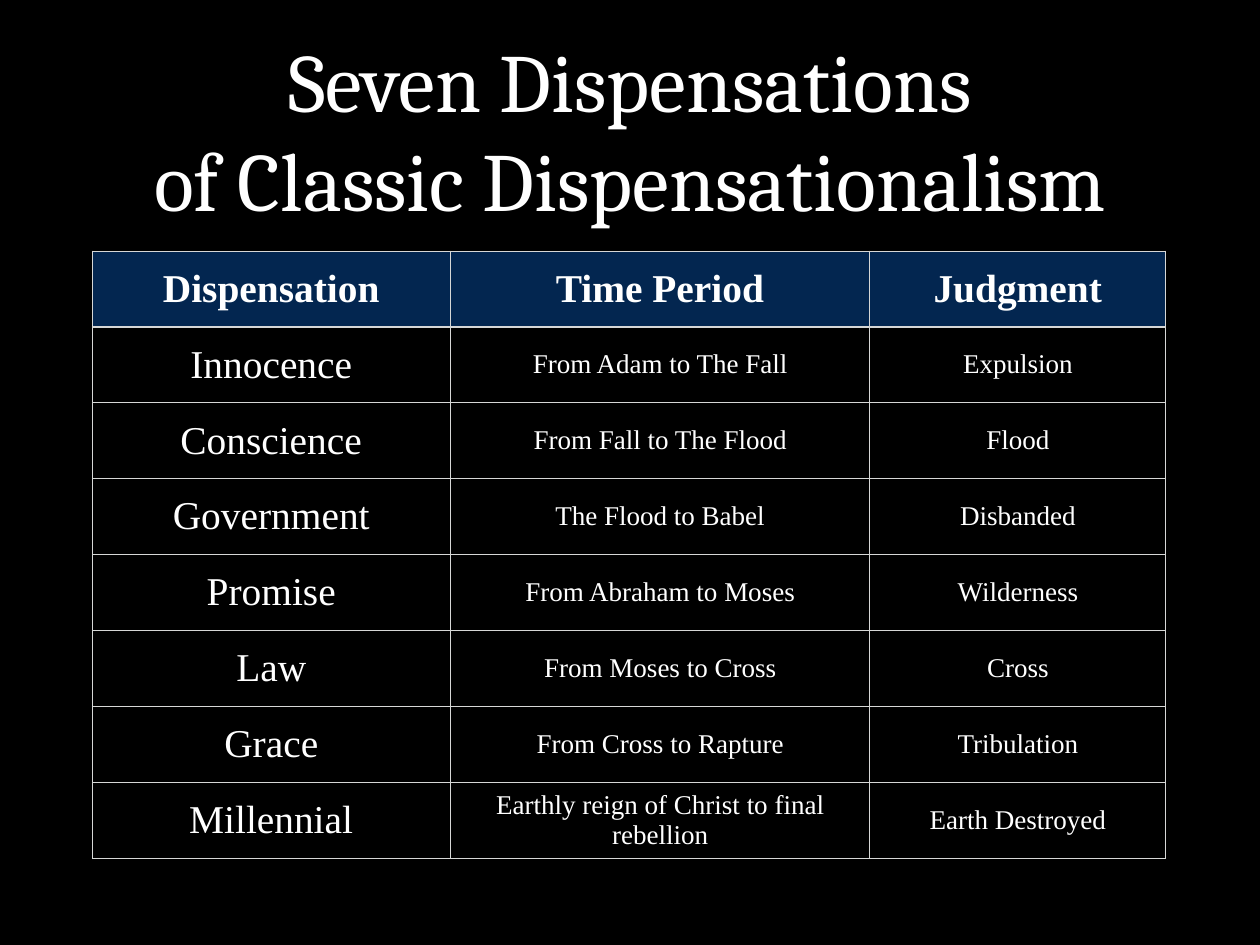
from dataclasses import dataclass

from lxml import etree
from pptx import Presentation
from pptx.dml.color import RGBColor
from pptx.enum.text import MSO_ANCHOR, PP_ALIGN
from pptx.oxml.ns import qn
from pptx.slide import Slide
from pptx.table import _Cell
from pptx.text.text import TextFrame
from pptx.util import Pt

CENTER = PP_ALIGN.CENTER
MIDDLE = MSO_ANCHOR.MIDDLE

BLACK = RGBColor(0x00, 0x00, 0x00)
WHITE = RGBColor(0xFF, 0xFF, 0xFF)
NAVY = RGBColor(0x03, 0x26, 0x50)
BORDER_GRAY = RGBColor(0xD6, 0xD7, 0xD6)

LEFT = Pt(75)
WIDTH = Pt(874)
INSET = Pt(4)
COLUMN_WIDTHS = (Pt(291), Pt(341), Pt(240.5))
ROW_HEIGHT = Pt(61.7)


@dataclass(frozen=True)
class TextStyle:
    font: str
    size: float
    bold: bool = False


@dataclass(frozen=True)
class Dispensation:
    name: str
    period: str
    judgment: str


TITLE_STYLE = TextStyle("Cambria", 67.2)
HEADER_STYLE = TextStyle("Times New Roman", 32, bold=True)
NAME_STYLE = TextStyle("Times New Roman", 32)
DETAIL_STYLE = TextStyle("Times New Roman", 22)

TITLE_LINES = ("Seven Dispensations", "of Classic Dispensationalism")
HEADERS = ("Dispensation", "Time Period", "Judgment")
DISPENSATIONS = (
    Dispensation("Innocence", "From Adam to The Fall", "Expulsion"),
    Dispensation("Conscience", "From Fall to The Flood", "Flood"),
    Dispensation("Government", "The Flood to Babel", "Disbanded"),
    Dispensation("Promise", "From Abraham to Moses", "Wilderness"),
    Dispensation("Law", "From Moses to Cross", "Cross"),
    Dispensation("Grace", "From Cross to Rapture", "Tribulation"),
    Dispensation("Millennial", "Earthly reign of Christ to final rebellion",
                 "Earth Destroyed"),
)


def write_centered(frame: TextFrame, text: str, style: TextStyle) -> None:
    frame.text = text
    for paragraph in frame.paragraphs:
        paragraph.alignment = CENTER
        paragraph.font.name = style.font
        paragraph.font.size = Pt(style.size)
        paragraph.font.bold = style.bold
        paragraph.font.color.rgb = WHITE


def set_insets(holder: TextFrame | _Cell) -> None:
    holder.margin_left = holder.margin_right = INSET
    holder.margin_top = holder.margin_bottom = INSET
    holder.vertical_anchor = MIDDLE


def set_borders(cell: _Cell, top: float, bottom: float) -> None:
    """Draw all four cell borders; the side borders are one point wide."""
    properties = cell._tc.get_or_add_tcPr()
    for tag, width in (("lnL", 1), ("lnR", 1), ("lnT", top), ("lnB", bottom)):
        line = etree.SubElement(properties, qn(f"a:{tag}"), w=str(Pt(width)))
        fill = etree.SubElement(line, qn("a:solidFill"))
        etree.SubElement(fill, qn("a:srgbClr"), val=str(BORDER_GRAY))


def add_title(page: Slide) -> None:
    box = page.shapes.add_textbox(LEFT, Pt(20), WIDTH, Pt(170))
    frame = box.text_frame
    frame.word_wrap = True
    set_insets(frame)
    write_centered(frame, "\n".join(TITLE_LINES), TITLE_STYLE)


def add_dispensation_table(page: Slide) -> None:
    rows = [HEADERS] + [(item.name, item.period, item.judgment)
                        for item in DISPENSATIONS]
    table = page.shapes.add_table(len(rows), len(HEADERS), LEFT, Pt(204),
                                  sum(COLUMN_WIDTHS),
                                  ROW_HEIGHT * len(rows)).table
    table.first_row = True
    table.horz_banding = False
    for column, width in zip(table.columns, COLUMN_WIDTHS):
        column.width = width

    for row_index, texts in enumerate(rows):
        table.rows[row_index].height = ROW_HEIGHT
        is_header = row_index == 0
        for column_index, text in enumerate(texts):
            cell = table.cell(row_index, column_index)
            set_insets(cell)
            set_borders(cell, top=2 if row_index == 1 else 1,
                        bottom=2 if is_header else 1)
            if is_header:
                style = HEADER_STYLE
                cell.fill.solid()
                cell.fill.fore_color.rgb = NAVY
            else:
                style = NAME_STYLE if column_index == 0 else DETAIL_STYLE
                cell.fill.background()
            write_centered(cell.text_frame, text, style)


def main() -> None:
    deck = Presentation()
    deck.slide_width = Pt(1024)
    deck.slide_height = Pt(768)
    page = deck.slides.add_slide(deck.slide_layouts[6])
    page.background.fill.solid()
    page.background.fill.fore_color.rgb = BLACK
    add_title(page)
    add_dispensation_table(page)
    deck.save("out.pptx")


if __name__ == "__main__":
    main()
